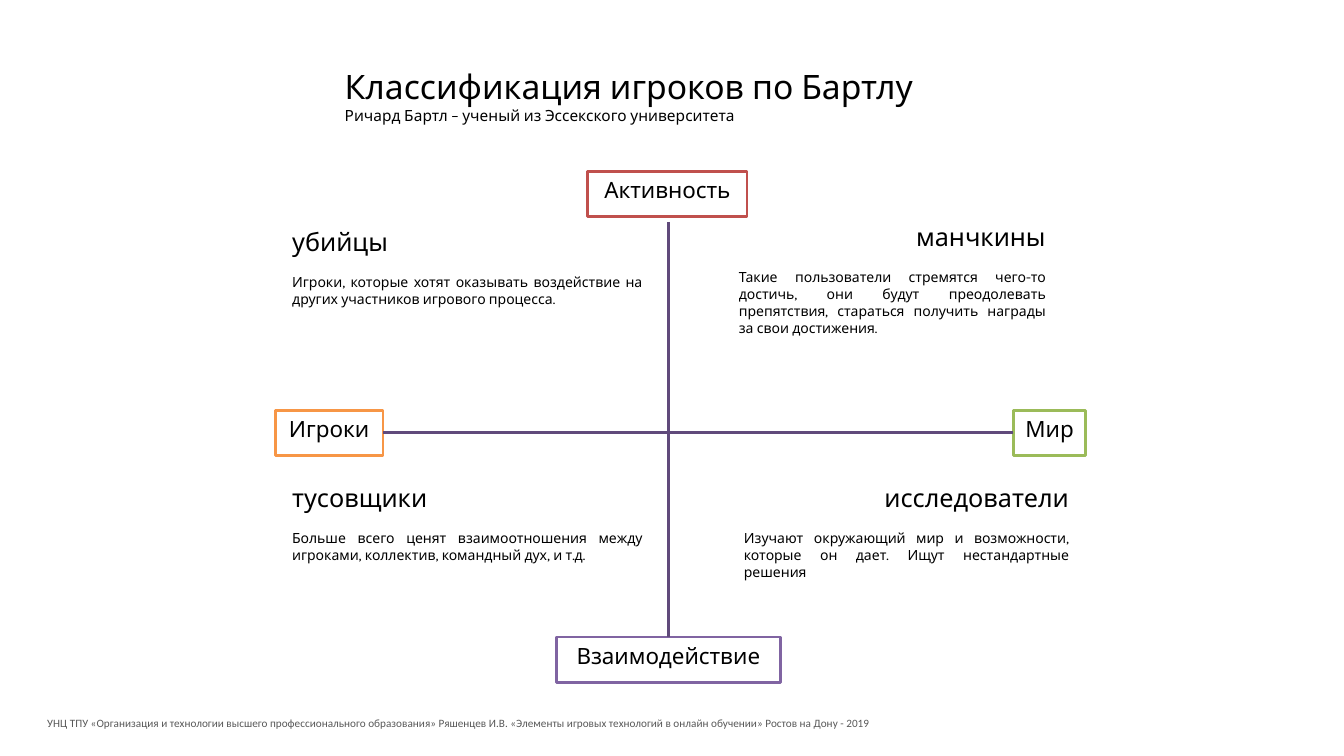
from dataclasses import dataclass

from lxml import etree
from pptx import Presentation
from pptx.dml.color import RGBColor
from pptx.enum.shapes import MSO_CONNECTOR, MSO_SHAPE
from pptx.enum.text import MSO_ANCHOR, PP_ALIGN
from pptx.oxml.ns import qn
from pptx.util import Pt

PX = 9144  # one px is a hundredth of an inch

BLACK = RGBColor(0x00, 0x00, 0x00)
WHITE = RGBColor(0xFF, 0xFF, 0xFF)
GRAY = RGBColor(0x59, 0x59, 0x59)
ORANGE = RGBColor(0xF7, 0x96, 0x46)
GREEN = RGBColor(0x9B, 0xBB, 0x59)
RED = RGBColor(0xC0, 0x50, 0x4D)
PURPLE = RGBColor(0x80, 0x64, 0xA2)
DARK_PURPLE = RGBColor(0x60, 0x4A, 0x7B)

RECTANGLE = MSO_SHAPE.RECTANGLE
STRAIGHT = MSO_CONNECTOR.STRAIGHT
TOP = MSO_ANCHOR.TOP
LEFT, CENTER = PP_ALIGN.LEFT, PP_ALIGN.CENTER
RIGHT, JUSTIFY = PP_ALIGN.RIGHT, PP_ALIGN.JUSTIFY

MAIN_FONT = "Karla"
FOOTER_FONT = "Calibri"
POLE_HEIGHT = 45
TOP_SIDE, LEFT_SIDE, RIGHT_SIDE = 0, 1, 3


@dataclass
class Pole:
    text: str
    left: int
    top: int
    width: int
    color: RGBColor


@dataclass
class PlayerType:
    name: str
    description: str
    left: int
    top: int
    width: int
    height: int
    align: PP_ALIGN


PLAYERS = Pole("Игроки", 273, 407, 107, ORANGE)
WORLD = Pole("Мир", 1005, 407, 72, GREEN)
ACTION = Pole("Активность", 583, 170, 158, RED)
INTERACTION = Pole("Взаимодействие", 552, 632, 222, PURPLE)

PLAYER_TYPES = [
    PlayerType("манчкины",
               "Такие пользователи стремятся чего-то достичь, они будут преодолевать "
               "препятствия, стараться получить награды за свои достижения.",
               723, 215, 324, 152, RIGHT),
    PlayerType("исследователи",
               "Изучают окружающий мир и возможности, которые он дает. "
               "Ищут нестандартные решения",
               728, 474, 342, 131, RIGHT),
    PlayerType("тусовщики",
               "Больше всего ценят взаимоотношения между игроками, коллектив, "
               "командный дух, и т.д.",
               280, 474, 367, 111, LEFT),
    PlayerType("убийцы",
               "Игроки, которые хотят оказывать воздействие на других участников "
               "игрового процесса.",
               280, 220, 367, 111, LEFT),
]


def format_run(run, size: int, color: RGBColor = BLACK, font: str = MAIN_FONT) -> None:
    run.font.size = Pt(size)
    run.font.name = font
    run.font.color.rgb = color


def add_text(slide, text: str, left: int, top: int, width: int, height: int):
    box = slide.shapes.add_textbox(left * PX, top * PX, width * PX, height * PX)
    box.text_frame.word_wrap = True
    box.text_frame.text = text
    return box.text_frame


def add_pole(slide, pole: Pole):
    shape = slide.shapes.add_shape(RECTANGLE, pole.left * PX, pole.top * PX,
                                   pole.width * PX, POLE_HEIGHT * PX)
    shape.shadow.inherit = False
    shape.fill.solid()
    shape.fill.fore_color.rgb = WHITE
    shape.line.color.rgb = pole.color
    shape.line.width = Pt(2)
    text_frame = shape.text_frame
    text_frame.word_wrap = False
    text_frame.vertical_anchor = TOP
    text_frame.text = pole.text
    paragraph = text_frame.paragraphs[0]
    paragraph.alignment = CENTER
    format_run(paragraph.runs[0], 16)
    return shape


def add_axis(slide, x1: int, y1: int, x2: int, y2: int):
    axis = slide.shapes.add_connector(STRAIGHT, x1 * PX, y1 * PX, x2 * PX, y2 * PX)
    axis.line.color.rgb = DARK_PURPLE
    axis.line.width = Pt(2.25)
    etree.SubElement(axis._element.spPr, qn("a:effectLst"))
    return axis


def add_player_type(slide, player: PlayerType) -> None:
    text_frame = add_text(slide, f"{player.name}\n{player.description}",
                          player.left, player.top, player.width, player.height)
    heading, body = text_frame.paragraphs
    heading.alignment = player.align
    format_run(heading.runs[0], 18)
    body.alignment = JUSTIFY
    body.space_before = Pt(12)
    format_run(body.runs[0], 10)


def main() -> None:
    presentation = Presentation()
    presentation.slide_width = 1333 * PX
    presentation.slide_height = 750 * PX
    slide = presentation.slides.add_slide(presentation.slide_layouts[6])

    # Title and subtitle
    title = add_text(slide, "Классификация игроков по Бартлу\v"
                     "Ричард Бартл – ученый из Эссекского университета",
                     332, 60, 768, 69)
    for run, size in zip(title.paragraphs[0].runs, (24, 11)):
        format_run(run, size)

    # Poles of the two axes
    players = add_pole(slide, PLAYERS)
    world = add_pole(slide, WORLD)
    add_pole(slide, ACTION)
    interaction = add_pole(slide, INTERACTION)

    # Axes
    vertical = add_axis(slide, 663, 220, 663, 632)
    vertical.end_connect(interaction, TOP_SIDE)
    horizontal = add_axis(slide, 380, 430, 1005, 430)
    horizontal.begin_connect(players, RIGHT_SIDE)
    horizontal.end_connect(world, LEFT_SIDE)

    # Player types in the quadrants
    for player in PLAYER_TYPES:
        add_player_type(slide, player)

    # Footer
    footer = add_text(slide, "УНЦ ТПУ «Организация и технологии высшего профессионального "
                      "образования» Ряшенцев И.В. «Элементы игровых технологий в онлайн "
                      "обучении» Ростов на Дону - 2019", 37, 706, 1189, 24)
    format_run(footer.paragraphs[0].runs[0], 8, GRAY, FOOTER_FONT)

    presentation.save("out.pptx")


if __name__ == "__main__":
    main()
